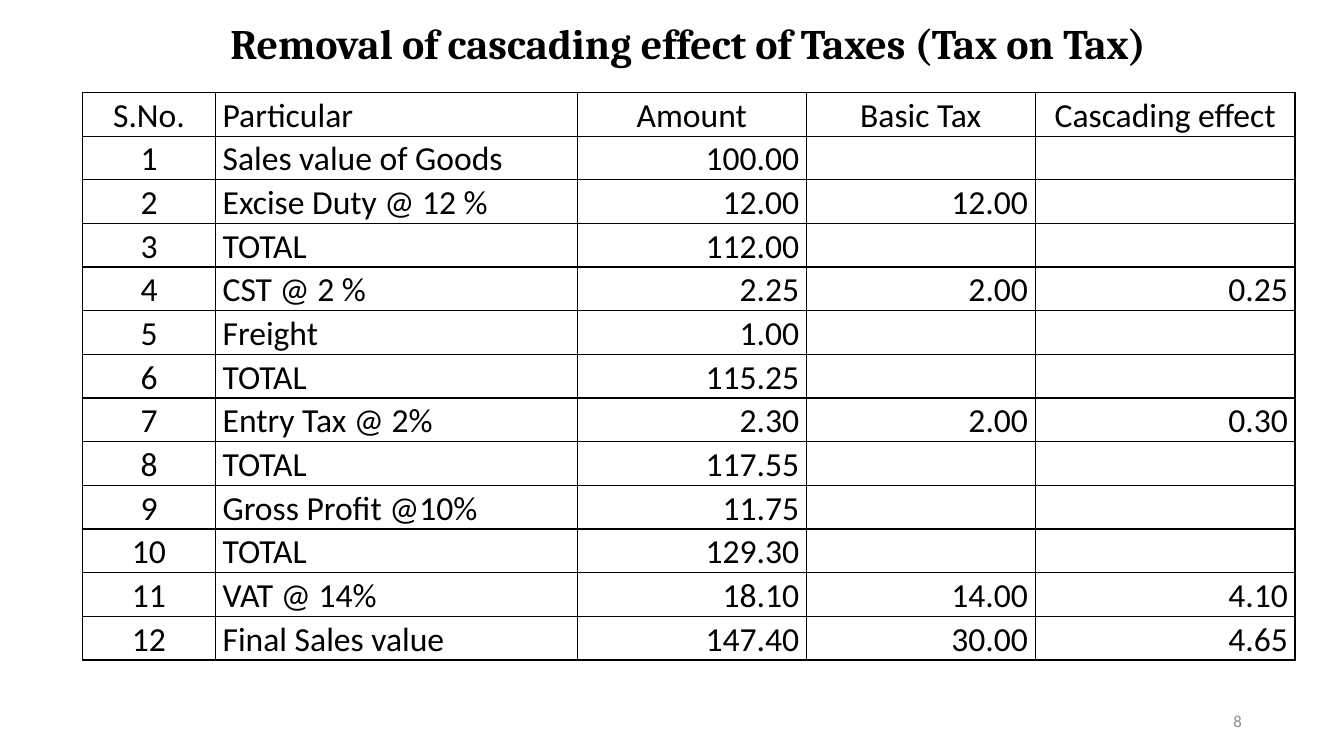
from lxml.etree import SubElement as Sub
from pptx import Presentation as Deck
from pptx.dml.color import RGBColor as Rgb
from pptx.enum.text import MSO_ANCHOR as Anchor, PP_ALIGN as Align
from pptx.oxml.ns import qn
from pptx.util import Cm, Pt

BLACK = Rgb(0x00, 0x00, 0x00)
GREY = Rgb(0x8C, 0x8C, 0x8C)

HEAD = {"name": "Cambria", "size": Pt(30), "bold": True}
BODY = {"name": "Calibri", "size": Pt(24), "bold": False}
PAGE = {"name": "Calibri", "size": Pt(12)}
INSET = {"margin_left": Cm(0.18), "margin_right": Cm(0.18),
         "margin_top": 0, "margin_bottom": 0}

WIDTHS = [3.35, 9.12, 5.77, 5.77, 6.55]
ALIGNS = [Align.CENTER, Align.LEFT] + [Align.RIGHT] * 3
ROWS = [
    ("S.No.", "Particular", "Amount", "Basic Tax", "Cascading effect"),
    ("1", "Sales value of Goods", "100.00", "", ""),
    ("2", "Excise Duty @ 12 %", "12.00", "12.00", ""),
    ("3", "TOTAL", "112.00", "", ""),
    ("4", "CST @ 2 %", "2.25", "2.00", "0.25"),
    ("5", "Freight", "1.00", "", ""),
    ("6", "TOTAL", "115.25", "", ""),
    ("7", "Entry Tax @ 2%", "2.30", "2.00", "0.30"),
    ("8", "TOTAL", "117.55", "", ""),
    ("9", "Gross Profit @10%", "11.75", "", ""),
    ("10", "TOTAL", "129.30", "", ""),
    ("11", "VAT @ 14%", "18.10", "14.00", "4.10"),
    ("12", "Final Sales value", "147.40", "30.00", "4.65"),
]


def apply(item, values):
    for key, value in values.items():
        setattr(item, key, value)


def write(para, text, font, color, align, space):
    apply(para, {"alignment": align, "line_spacing": space})
    if text:
        run = para.add_run()
        run.text = text
        apply(run.font, font)
        run.font.color.rgb = color


def add_text(slide, box, text, font, color, align, space):
    frame = slide.shapes.add_textbox(*map(Cm, box)).text_frame
    apply(frame, {"word_wrap": True, "vertical_anchor": Anchor.MIDDLE})
    write(frame.paragraphs[0], text, font, color, align, space)


def add_edges(cell):
    props = cell._tc.get_or_add_tcPr()
    for side in ("a:lnL", "a:lnR", "a:lnT", "a:lnB"):
        line = Sub(props, qn(side), w=str(Pt(1)))
        fill = Sub(line, qn("a:solidFill"))
        Sub(fill, qn("a:srgbClr"), val=str(BLACK))


def add_taxes(slide, box):
    left, top, width, height = map(Cm, box)
    table = slide.shapes.add_table(
        len(ROWS), len(WIDTHS), left, top, width, height).table
    apply(table, {"first_row": False, "horz_banding": False})
    for col, size in zip(table.columns, WIDTHS):
        col.width = int(width * size / sum(WIDTHS))
    for r, row in enumerate(ROWS):
        table.rows[r].height = height // len(ROWS)
        for c, text in enumerate(row):
            cell = table.cell(r, c)
            apply(cell, INSET)
            add_edges(cell)
            cell.fill.background()
            align = Align.CENTER if r == 0 and c != 1 else ALIGNS[c]
            write(cell.text_frame.paragraphs[0], text, BODY, BLACK, align, 1.07)


def main():
    deck = Deck()
    apply(deck, {"slide_width": Cm(33.87), "slide_height": Cm(19.05)})
    slide = deck.slides.add_slide(deck.slide_layouts[6])
    add_text(slide, (1.9, 0, 30.9, 2.33),
             "Removal of cascading effect of Taxes (Tax on Tax)",
             HEAD, BLACK, Align.CENTER, 0.9)
    add_taxes(slide, (2.08, 2.33, 30.56, 14.3))
    add_text(slide, (23.93, 17.65, 7.62, 1.02), "8", PAGE, GREY, Align.RIGHT, 1.0)
    deck.save("out.pptx")


if __name__ == "__main__":
    main()
